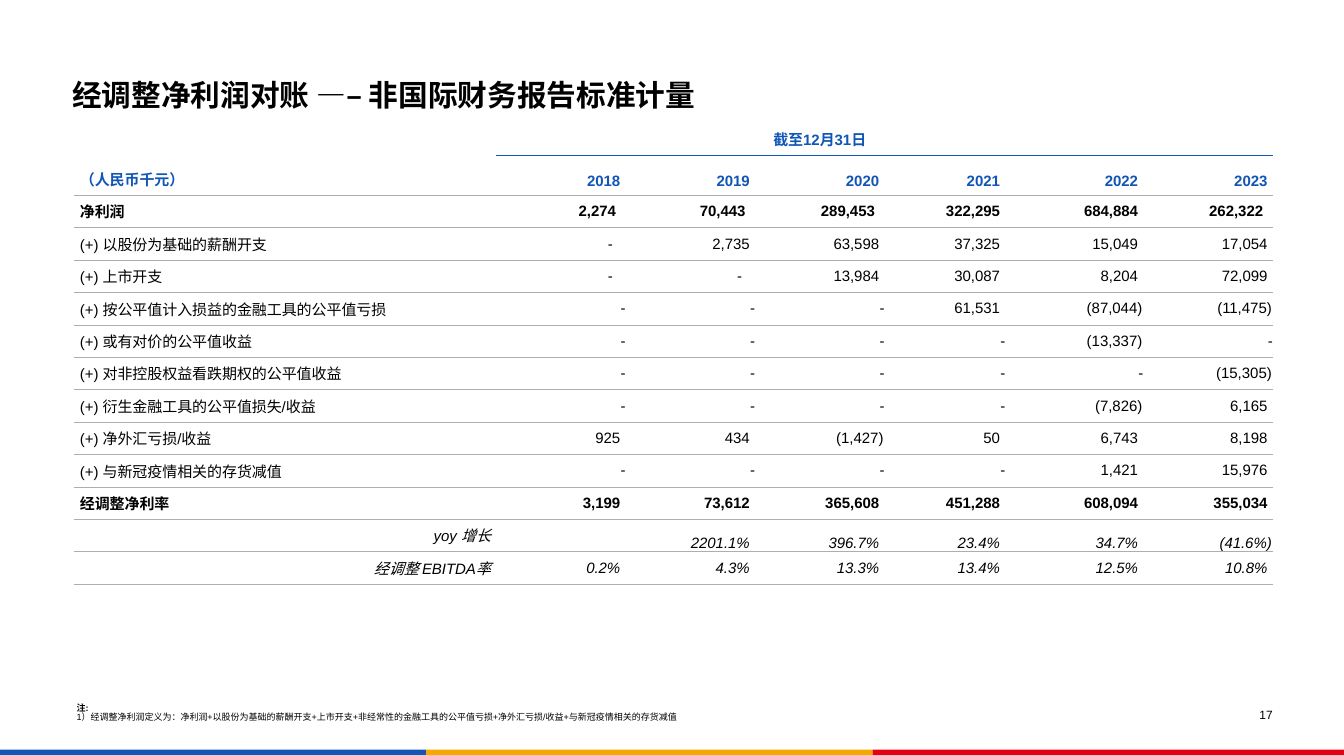
from dataclasses import dataclass
from typing import Optional

import pptx
import pptx.dml.color
import pptx.enum.shapes
import pptx.enum.text
import pptx.oxml
import pptx.oxml.ns
import pptx.util

Inches, Pt = pptx.util.Inches, pptx.util.Pt
ALIGN = pptx.enum.text.PP_ALIGN
ANCHOR = pptx.enum.text.MSO_ANCHOR
FONT = "Arial"
BLUE, AMBER, RED = "1156B6", "F5A802", "E50014"
BLACK, GREY = "000000", "A9B1B0"
WIDTH, HEIGHT = 12.46, 7
COLUMN_WIDTHS = (3.91, 1.2, 1.2, 1.2, 1.12, 1.28, 1.2)
ROW_HEIGHT, HEADER_HEIGHT = 0.3, 0.37
PADDING = 0.05


@dataclass
class Row:
    label: str
    values: tuple[str, ...]
    bold: bool = False
    italic: bool = False
    colour: str = BLACK
    label_align: ALIGN = ALIGN.LEFT
    anchor: ANCHOR = ANCHOR.MIDDLE
    dash_inset: float = 0
    insets: Optional[tuple[float, ...]] = None


@dataclass
class Bar:
    left: float
    right: float
    colour: str


HEADER = Row("（人民币千元）", ("2018", "2019", "2020", "2021", "2022", "2023"),
             bold=True, colour=BLUE, anchor=ANCHOR.BOTTOM)
ROWS = (
    HEADER,
    Row("净利润", ("2,274", "70,443", "289,453", "322,295", "684,884", "262,322"),
        bold=True, insets=(0.09, 0.09, 0.09, 0.05, 0.05, 0.09)),
    Row("(+) 以股份为基础的薪酬开支",
        ("-", "2,735", "63,598", "37,325", "15,049", "17,054"), dash_inset=0.12),
    Row("(+) 上市开支",
        ("-", "-", "13,984", "30,087", "8,204", "72,099"), dash_inset=0.12),
    Row("(+) 按公平值计入损益的金融工具的公平值亏损",
        ("-", "-", "-", "61,531", "(87,044)", "(11,475)")),
    Row("(+) 或有对价的公平值收益", ("-", "-", "-", "-", "(13,337)", "-")),
    Row("(+) 对非控股权益看跌期权的公平值收益", ("-", "-", "-", "-", "-", "(15,305)")),
    Row("(+) 衍生金融工具的公平值损失/收益", ("-", "-", "-", "-", "(7,826)", "6,165")),
    Row("(+) 净外汇亏损/收益", ("925", "434", "(1,427)", "50", "6,743", "8,198")),
    Row("(+) 与新冠疫情相关的存货减值", ("-", "-", "-", "-", "1,421", "15,976")),
    Row("经调整净利率",
        ("3,199", "73,612", "365,608", "451,288", "608,094", "355,034"), bold=True),
    Row("yoy 增长", ("", "2201.1%", "396.7%", "23.4%", "34.7%", "(41.6%)"),
        italic=True, label_align=ALIGN.RIGHT, anchor=ANCHOR.BOTTOM),
    Row("经调整 EBITDA率", ("0.2%", "4.3%", "13.3%", "13.4%", "12.5%", "10.8%"),
        italic=True, label_align=ALIGN.RIGHT),
)
BARS = (Bar(0, 3.95, BLUE), Bar(3.95, 8.09, AMBER), Bar(8.09, WIDTH, RED))


def rgb(colour: str) -> pptx.dml.color.RGBColor:
    return pptx.dml.color.RGBColor.from_string(colour)


def format_paragraph(paragraph, size: float, colour: str = BLACK, bold: bool = False,
                     italic: bool = False, align: ALIGN = ALIGN.LEFT) -> None:
    paragraph.alignment = align
    font = paragraph.font
    font.name, font.size = FONT, Pt(size)
    font.bold, font.italic = bold, italic
    font.color.rgb = rgb(colour)


def set_margins(target, left: float, top: float, right: float, bottom: float) -> None:
    target.margin_left, target.margin_top = Inches(left), Inches(top)
    target.margin_right, target.margin_bottom = Inches(right), Inches(bottom)


def set_borders(cell, top: Optional[tuple[str, float]],
                bottom: Optional[tuple[str, float]]) -> None:
    properties = cell._tc.get_or_add_tcPr()
    for side, border in (("L", None), ("R", None), ("T", top), ("B", bottom)):
        colour, width = border or (None, 0)
        fill = (f'<a:solidFill><a:srgbClr val="{colour}"/></a:solidFill>'
                if border else "<a:noFill/>")
        properties.append(pptx.oxml.parse_xml(
            f'<a:ln{side} {pptx.oxml.ns.nsdecls("a")} w="{Pt(width)}">{fill}</a:ln{side}>'))
    cell.fill.background()


def fill_cell(cell, text: str, row: Row, align: ALIGN, anchor: ANCHOR) -> None:
    cell.text = text
    cell.vertical_anchor = anchor
    format_paragraph(cell.text_frame.paragraphs[0], 10, row.colour, row.bold,
                     row.italic, align)


def value_inset(row: Row, column: int) -> float:
    value = row.values[column]
    if row.insets:
        return row.insets[column]
    if value == "-":
        return row.dash_inset
    return 0.01 if value.endswith(")") else PADDING


def add_reconciliation(slide) -> None:
    table = slide.shapes.add_table(
        len(ROWS) + 1, len(COLUMN_WIDTHS), Inches(0.69), Inches(1.14),
        Inches(sum(COLUMN_WIDTHS)),
        Inches(ROW_HEIGHT * len(ROWS) + HEADER_HEIGHT)).table
    table.first_row = table.horz_banding = False
    for column, width in zip(table.columns, COLUMN_WIDTHS):
        column.width = Inches(width)
    for index, table_row in enumerate(table.rows):
        table_row.height = Inches(HEADER_HEIGHT if index == 1 else ROW_HEIGHT)

    # Period heading over the years
    period_line, header_line, row_line = (BLUE, 0.5), (GREY, 1), (GREY, 0.5)
    for column in range(len(COLUMN_WIDTHS)):
        cell = table.cell(0, column)
        set_borders(cell, None, period_line if column else None)
        set_margins(cell, PADDING, PADDING, PADDING, PADDING)
        format_paragraph(cell.text_frame.paragraphs[0], 10)
    table.cell(0, 1).merge(table.cell(0, 5))
    fill_cell(table.cell(0, 1), "截至12月31日", HEADER, ALIGN.CENTER, ANCHOR.BOTTOM)

    # Years and reconciliation items
    for index, row in enumerate(ROWS, start=1):
        top = {1: period_line, 2: header_line}.get(index, row_line)
        bottom = header_line if index == 1 else row_line
        label = table.cell(index, 0)
        set_borders(label, None if index == 1 else top, bottom)
        set_margins(label, PADDING, PADDING, PADDING, PADDING)
        label_anchor = ANCHOR.BOTTOM if row is HEADER else ANCHOR.MIDDLE
        fill_cell(label, row.label, row, row.label_align, label_anchor)
        for column, value in enumerate(row.values):
            cell = table.cell(index, column + 1)
            set_borders(cell, top, bottom)
            vertical = PADDING if row is HEADER else 0
            set_margins(cell, 0, vertical, value_inset(row, column), vertical)
            fill_cell(cell, value, row, ALIGN.RIGHT, row.anchor)


def add_text(slide, left: float, top: float, width: float, height: float):
    box = slide.shapes.add_textbox(Inches(left), Inches(top), Inches(width), Inches(height))
    box.text_frame.word_wrap = True
    return box.text_frame


def add_bar(slide, bar: Bar) -> None:
    shape = slide.shapes.add_shape(
        pptx.enum.shapes.MSO_SHAPE.RECTANGLE, Inches(bar.left), Inches(HEIGHT - 0.05),
        Inches(bar.right - bar.left), Inches(0.05))
    shape.shadow.inherit = False
    shape.fill.solid()
    shape.fill.fore_color.rgb = rgb(bar.colour)
    shape.line.fill.background()


def main() -> None:
    presentation = pptx.Presentation()
    presentation.slide_width, presentation.slide_height = Inches(WIDTH), Inches(HEIGHT)
    slide = presentation.slides.add_slide(presentation.slide_layouts[5])

    # Colour strip along the bottom edge
    for bar in BARS:
        add_bar(slide, bar)

    add_reconciliation(slide)

    # Title
    title = slide.shapes.title
    title.left, title.top = Inches(0.67), Inches(0.7)
    title.width, title.height = Inches(11.1), Inches(0.35)
    frame = title.text_frame
    frame.text = "经调整净利润对账 —– 非国际财务报告标准计量"
    frame.auto_size = pptx.enum.text.MSO_AUTO_SIZE.NONE
    frame.vertical_anchor = ANCHOR.TOP
    set_margins(frame, 0, 0.05, 0.05, 0)
    format_paragraph(frame.paragraphs[0], 19.8, bold=True)
    frame.paragraphs[0].line_spacing = 0.9

    # Page number
    frame = add_text(slide, 11.52, 6.56, 0.28, 0.12)
    frame.text = "17"
    set_margins(frame, 0, 0, 0, 0)
    format_paragraph(frame.paragraphs[0], 8, align=ALIGN.RIGHT)

    # Footnote
    frame = add_text(slide, 0.71, 6.47, 11.09, 0.28)
    frame.text = ("注:\n1）经调整净利润定义为：净利润+以股份为基础的薪酬开支+上市开支+"
                  "非经常性的金融工具的公平值亏损+净外汇亏损/收益+与新冠疫情相关的存货减值")
    frame.vertical_anchor = ANCHOR.BOTTOM
    set_margins(frame, 0, 0.05, 0.1, 0.05)
    for index, paragraph in enumerate(frame.paragraphs):
        format_paragraph(paragraph, 6, bold=index == 0)
        paragraph.line_spacing = 0.9

    presentation.save("out.pptx")


if __name__ == "__main__":
    main()
